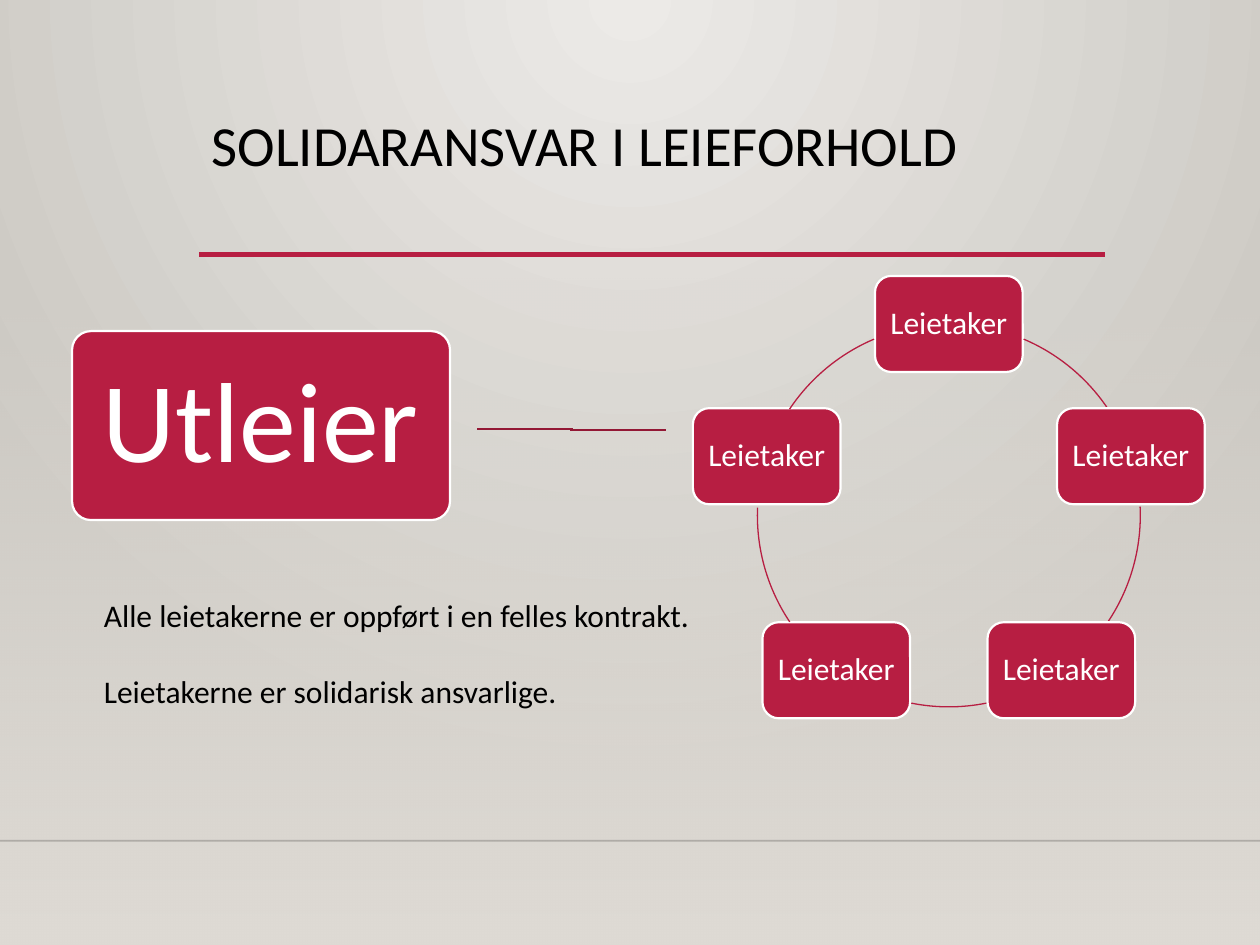
from math import cos, radians, sin

from pptx import Presentation
from pptx.dml.color import RGBColor
from pptx.enum.shapes import MSO_CONNECTOR as Connector, MSO_SHAPE as Shape
from pptx.enum.text import MSO_ANCHOR as Anchor, PP_ALIGN as Align
from pptx.oxml import parse_xml
from pptx.oxml.ns import nsdecls, qn
from pptx.oxml.xmlchemy import OxmlElement
from pptx.util import Pt

COLORS = {
    "red": "B71E42",
    "dark_red": "931835",
    "white": "FFFFFF",
    "black": "000000",
    "light": "ECEAE7",
    "grey": "CAC7C1",
    "floor": "DFDBD5",
}
FONT = "Calibri"

# Circle of tenants, in points
CENTER_X, CENTER_Y, RADIUS = 542.2, 294.5, 109.4
TENANT_WIDTH, TENANT_HEIGHT = 84.4, 54.9
ARCS = [(293, 326), (357.4, 33.8), (78.7, 101.3), (146.2, 182.3), (213.7, 247)]


def color(name):
    return RGBColor.from_string(COLORS[name])


def set_gradient(fill, element, stops, direction):
    """Fill with (position, colour, opacity) stops, in percent."""
    fill.gradient()
    stop_xml = "".join(
        f'<a:gs pos="{position * 1000}"><a:srgbClr val="{COLORS[name]}">'
        f'<a:alpha val="{opacity * 1000}"/></a:srgbClr></a:gs>'
        for position, name, opacity in stops)
    gradient = element.find(".//" + qn("a:gradFill"))
    gradient.getparent().replace(gradient, parse_xml(
        f'<a:gradFill {nsdecls("a")} rotWithShape="1"><a:gsLst>{stop_xml}</a:gsLst>'
        f'{direction}</a:gradFill>'))


def add_line(slide, x1, x2, y, name, width, opacity=100):
    line = slide.shapes.add_connector(
        Connector.STRAIGHT, Pt(x1), Pt(y), Pt(x2), Pt(y))
    line.line.color.rgb = color(name)
    line.line.width = Pt(width)
    properties = line._element.spPr
    if opacity < 100:
        alpha = OxmlElement("a:alpha")
        alpha.set("val", str(opacity * 1000))
        properties.find(".//" + qn("a:srgbClr")).append(alpha)
    properties.append(OxmlElement("a:effectLst"))


def format_text(text_frame, size, name):
    for paragraph in text_frame.paragraphs:
        for run in paragraph.runs:
            run.font.name = FONT
            run.font.size = Pt(size)
            run.font.color.rgb = color(name)


def add_text(slide, left, top, width, height, text, size, wrap=True):
    box = slide.shapes.add_textbox(Pt(left), Pt(top), Pt(width), Pt(height))
    text_frame = box.text_frame
    text_frame.word_wrap = wrap
    text_frame.text = text
    format_text(text_frame, size, "black")
    return text_frame


def add_node(slide, left, top, width, height, text, size, rounding):
    node = slide.shapes.add_shape(
        Shape.ROUNDED_RECTANGLE, Pt(left), Pt(top), Pt(width), Pt(height))
    node.shadow.inherit = False
    node.adjustments[0] = rounding
    node.fill.solid()
    node.fill.fore_color.rgb = color("red")
    node.line.color.rgb = color("white")
    node.line.width = Pt(1.25)
    text_frame = node.text_frame
    text_frame.margin_left = text_frame.margin_right = Pt(5)
    text_frame.margin_top = text_frame.margin_bottom = Pt(5)
    text_frame.vertical_anchor = Anchor.MIDDLE
    text_frame.word_wrap = True
    text_frame.text = text
    text_frame.paragraphs[0].alignment = Align.CENTER
    text_frame.paragraphs[0].line_spacing = 0.9
    format_text(text_frame, size, "white")


def add_arc(slide, start, end):
    arc = slide.shapes.add_shape(
        Shape.ARC, Pt(CENTER_X - RADIUS), Pt(CENTER_Y - RADIUS),
        Pt(2 * RADIUS), Pt(2 * RADIUS))
    arc.shadow.inherit = False
    # Angles are stored in 60000ths of a degree, adjustments in 100000ths
    arc.adjustments[0] = start * 0.6
    arc.adjustments[1] = end * 0.6
    arc.fill.background()
    arc.line.color.rgb = color("red")
    arc.line.width = Pt(0.75)


def add_backdrop(slide):
    set_gradient(
        slide.background.fill, slide._element,
        [(0, "light", 100), (100, "grey", 100)],
        '<a:path path="circle">'
        '<a:fillToRect l="43000" t="0" r="43000" b="100000"/></a:path>')
    floor = slide.shapes.add_shape(
        Shape.RECTANGLE, Pt(0), Pt(158.4), Pt(720), Pt(381.6))
    floor.shadow.inherit = False
    floor.line.fill.background()
    set_gradient(
        floor.fill, floor._element,
        [(0, "floor", 0), (100, "floor", 100)],
        '<a:lin ang="5400000" scaled="0"/>')
    add_line(slide, 0, 720, 480.4, "black", 1, opacity=20)


def add_tenant_circle(slide):
    for index, (start, end) in enumerate(ARCS):
        angle = radians(-90 + index * 360 / len(ARCS))
        add_node(slide,
                 CENTER_X + RADIUS * cos(angle) - TENANT_WIDTH / 2,
                 CENTER_Y + RADIUS * sin(angle) - TENANT_HEIGHT / 2,
                 TENANT_WIDTH, TENANT_HEIGHT, "Leietaker", 18, 0.17)
        add_arc(slide, start, end)


def main():
    presentation = Presentation()
    presentation.slide_width, presentation.slide_height = Pt(720), Pt(540)
    slide = presentation.slides.add_slide(presentation.slide_layouts[6])
    add_backdrop(slide)

    # Title with its rule
    add_line(slide, 113.8, 631.4, 145.4, "red", 2.5)
    title = add_text(slide, 113.8, 63.4, 517.6, 82.8,
                     "SOLIDARANSVAR I LEIEFORHOLD", 32.4)
    title.paragraphs[0].line_spacing = 0.9

    # Landlord, tenants and the link between them
    add_node(slide, 41.2, 189.2, 216, 108, "Utleier", 65, 0.1)
    add_tenant_circle(slide)
    add_line(slide, 272.6, 327.4, 245.1, "dark_red", 1.25)
    add_line(slide, 325.9, 380.7, 245.6, "dark_red", 1.25)

    # Explanation
    notes = add_text(slide, 52.3, 337, 357.8, 94.3,
                     "Alle leietakerne er oppført i en felles kontrakt.\n"
                     "Leietakerne er solidarisk ansvarlige.", 18, wrap=False)
    notes.paragraphs[1].space_before = Pt(22)

    presentation.save("out.pptx")


if __name__ == "__main__":
    main()
